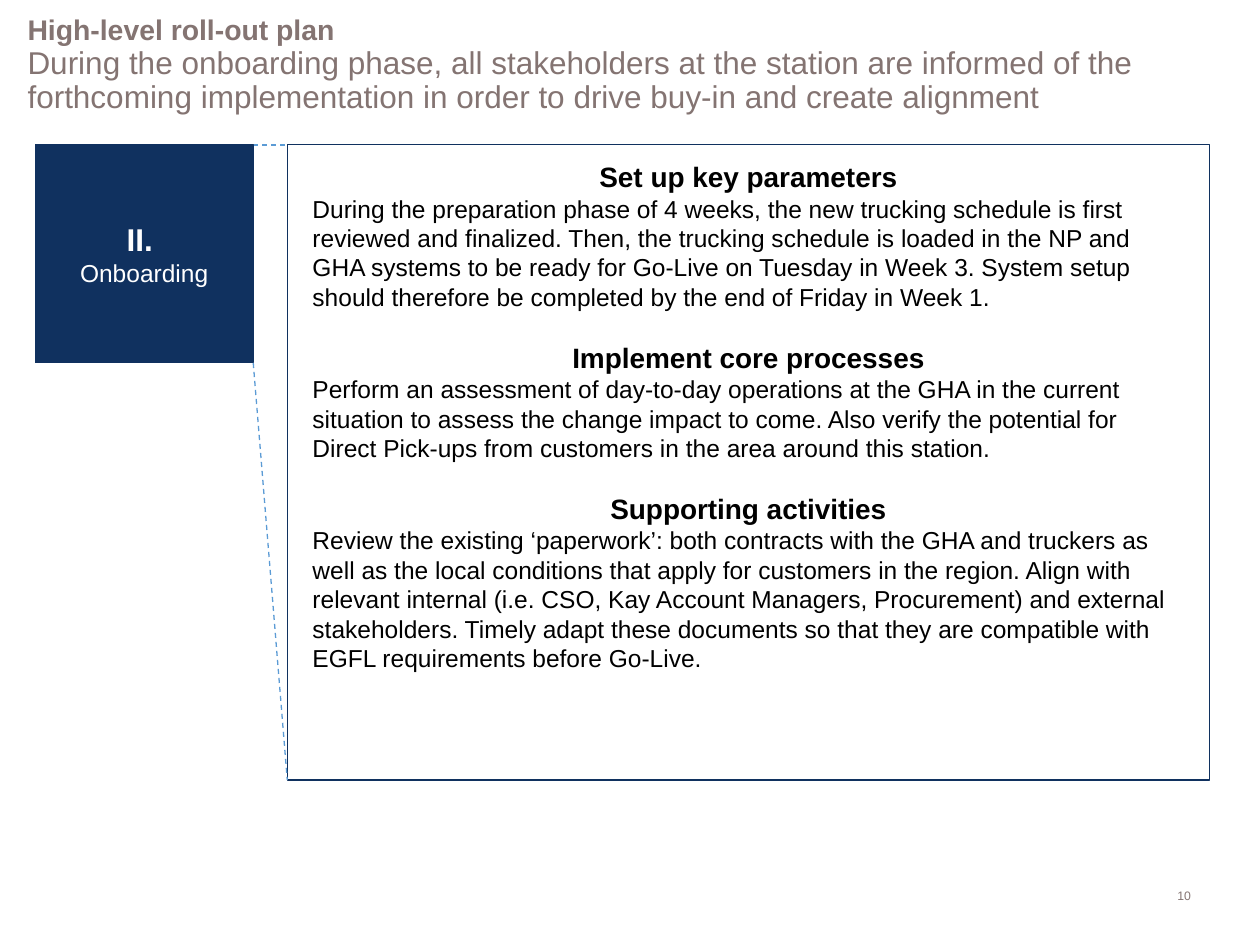
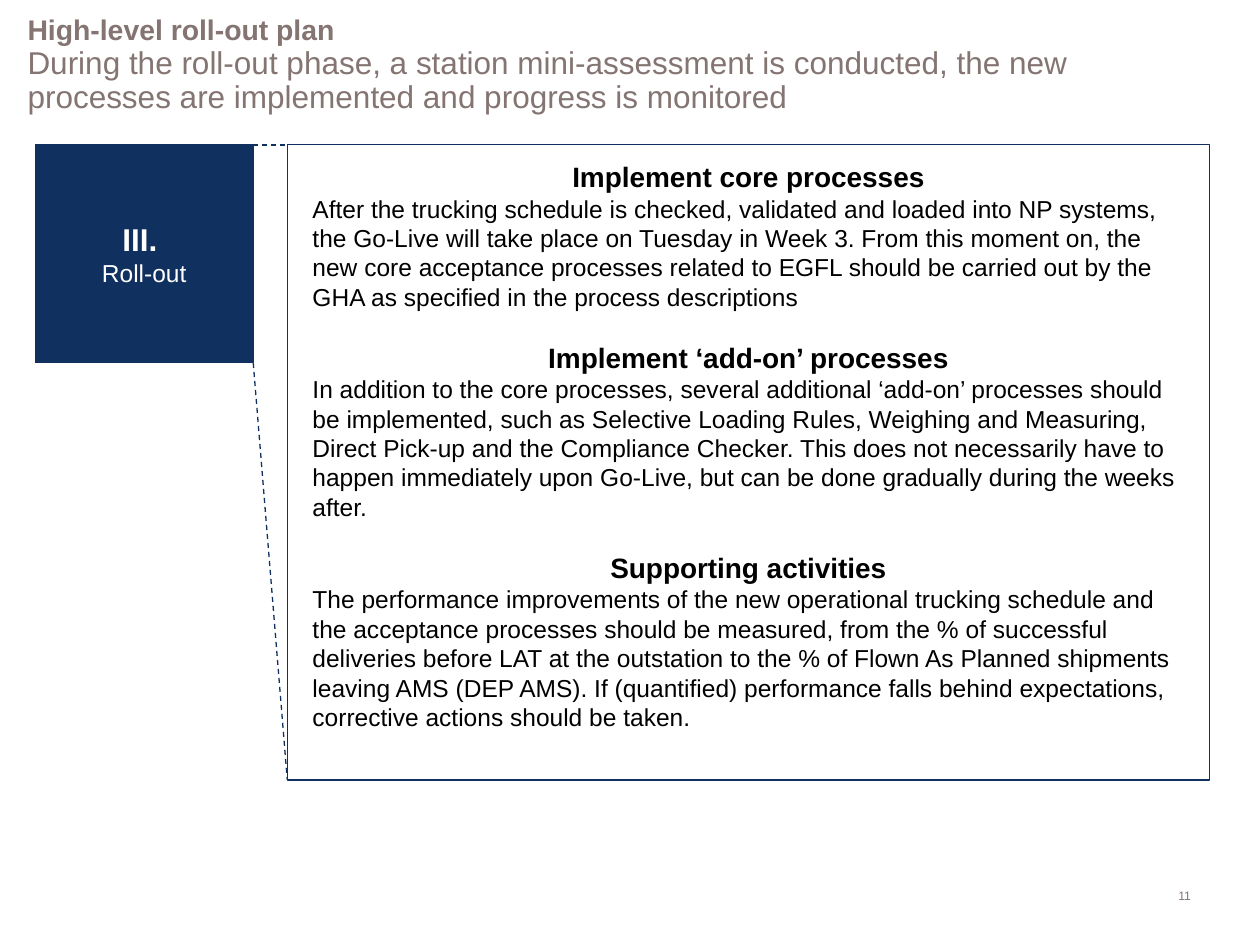
"""Build the two roll-out plan slides on onboarding and roll-out."""
from lxml.etree import SubElement
from pptx import Presentation
from pptx.dml.color import RGBColor
from pptx.enum.dml import MSO_LINE_DASH_STYLE as Dash
from pptx.enum.shapes import MSO_CONNECTOR as Connector, MSO_SHAPE as Shape
from pptx.enum.text import MSO_ANCHOR as Anchor, PP_ALIGN as Align
from pptx.oxml.ns import qn
from pptx.util import Inches, Pt

NAVY = RGBColor(0x10, 0x31, 0x5F)
SKY = RGBColor(0x5B, 0x9B, 0xD5)
TAUPE = RGBColor(0x84, 0x74, 0x72)
WHITE = RGBColor(0xFF, 0xFF, 0xFF)
BLACK = RGBColor(0, 0, 0)
FONT = "Arial"
HEADLINE = "High-level roll-out plan"

PHASES = [
    dict(
        page=10, numeral="II. ", name="Onboarding", guide=SKY, title_width=9.25,
        message="During the onboarding phase, all stakeholders at the station are informed "
                "of the forthcoming implementation in order to drive buy-in and create alignment",
        topics=[
            ("Set up key parameters",
             "During the preparation phase of 4 weeks, the new trucking schedule is first "
             "reviewed and finalized. Then, the trucking schedule is loaded in the NP and GHA "
             "systems to be ready for Go-Live on Tuesday in Week 3. System setup should "
             "therefore be completed by the end of Friday in Week 1."),
            ("Implement core processes",
             "Perform an assessment of day-to-day operations at the GHA in the current "
             "situation to assess the change impact to come. Also verify the potential for "
             "Direct Pick-ups from customers in the area around this station."),
            ("Supporting activities",
             "Review the existing ‘paperwork’: both contracts with the GHA and truckers as "
             "well as the local conditions that apply for customers in the region. Align with "
             "relevant internal (i.e. CSO, Kay Account Managers, Procurement) and external "
             "stakeholders. Timely adapt these documents so that they are compatible with "
             "EGFL requirements before Go-Live."),
        ],
    ),
    dict(
        page=11, numeral="III. ", name="Roll-out", guide=NAVY, title_width=8.62,
        message="During the roll-out phase, a station mini-assessment is conducted, the new "
                "processes are implemented and progress is monitored",
        topics=[
            ("Implement core processes",
             "After the trucking schedule is checked, validated and loaded into NP systems, "
             "the Go-Live will take place on Tuesday in Week 3. From this moment on, the new "
             "core acceptance processes related to EGFL should be carried out by the GHA as "
             "specified in the process descriptions"),
            ("Implement ‘add-on’ processes",
             "In addition to the core processes, several additional ‘add-on’ processes should "
             "be implemented, such as Selective Loading Rules, Weighing and Measuring, Direct "
             "Pick-up and the Compliance Checker. This does not necessarily have to happen "
             "immediately upon Go-Live, but can be done gradually during the weeks after."),
            ("Supporting activities",
             "The performance improvements of the new operational trucking schedule and the "
             "acceptance processes should be measured, from the % of successful deliveries "
             "before LAT at the outstation to the % of Flown As Planned shipments leaving AMS "
             "(DEP AMS). If (quantified) performance falls behind expectations, corrective "
             "actions should be taken."),
        ],
    ),
]

TOP = 1.15
TILE_LEFT, TILE_SIDE = 0.28, 1.73
PANEL_LEFT, PANEL_WIDTH, PANEL_HEIGHT = 2.28, 7.32, 5.04
TOPIC_GAP = 16.8


def write(box, lines, color, anchor=Anchor.TOP, inset=(0.1, 0.05), spacing=None):
    """Fill a box with (text, size, bold, alignment, space before) lines."""
    frame = box.text_frame
    frame.word_wrap = True
    frame.vertical_anchor = anchor
    frame.margin_left = frame.margin_right = Inches(inset[0])
    frame.margin_top = frame.margin_bottom = Inches(inset[1])
    for index, (text, size, bold, align, before) in enumerate(lines):
        para = frame.add_paragraph() if index else frame.paragraphs[0]
        para.text = text
        para.alignment = align
        para.space_before = Pt(before)
        para.line_spacing = spacing
        font = para.font
        font.name, font.size, font.bold = FONT, Pt(size), bold
        font.color.rgb = color


def add_text(slide, place, *args, **options):
    """Add a text box and fill it."""
    write(slide.shapes.add_textbox(*map(Inches, place)), *args, **options)


def add_rect(slide, place, fill, *args, **options):
    """Add a navy-edged rectangle and fill it with text."""
    rect = slide.shapes.add_shape(Shape.RECTANGLE, *map(Inches, place))
    rect.shadow.inherit = False
    rect.fill.solid()
    rect.fill.fore_color.rgb = fill
    rect.line.color.rgb = NAVY
    rect.line.width = Pt(0.75)
    write(rect, *args, **options)


def add_guide(slide, start_y, end_y, color):
    """Add a dashed line from the tile's right edge to the panel's left edge."""
    ends = TILE_LEFT + TILE_SIDE, start_y, PANEL_LEFT, end_y
    guide = slide.shapes.add_connector(Connector.STRAIGHT, *map(Inches, ends))
    guide.line.color.rgb = color
    guide.line.width = Pt(0.75)
    guide.line.dash_style = Dash.DASH
    SubElement(guide._element.spPr, qn("a:effectLst"))


def build_phase(slide, phase):
    """Lay out one phase of the plan."""
    add_text(slide, (8.74, 7, 0.81, 0.22),
             [(str(phase["page"]), 7, False, Align.RIGHT, 0)], TAUPE)
    add_text(slide, (0.12, 0.13, phase["title_width"], 0.78),
             [(HEADLINE, 16.2, True, Align.LEFT, 0),
              (phase["message"], 18, False, Align.LEFT, 0)],
             TAUPE, anchor=Anchor.MIDDLE, spacing=0.9)
    topic_lines = []
    for heading, body in phase["topics"]:
        gap = TOPIC_GAP if topic_lines else 0
        topic_lines += [(heading, 16, True, Align.CENTER, gap),
                        (body, 14, False, Align.LEFT, 0)]
    add_rect(slide, (PANEL_LEFT, TOP, PANEL_WIDTH, PANEL_HEIGHT), WHITE,
             topic_lines, BLACK, inset=(0.2, 0.12))
    add_guide(slide, TOP, TOP, phase["guide"])
    add_guide(slide, TOP + TILE_SIDE, TOP + PANEL_HEIGHT, phase["guide"])
    add_rect(slide, (TILE_LEFT, TOP, TILE_SIDE, TILE_SIDE), NAVY,
             [(phase["numeral"], 18, True, Align.CENTER, 0),
              (phase["name"], 14, False, Align.CENTER, 0)],
             WHITE, anchor=Anchor.MIDDLE)


def main():
    """Build and save the deck."""
    deck = Presentation()
    deck.slide_width, deck.slide_height = Inches(10), Inches(7.5)
    for phase in PHASES:
        build_phase(deck.slides.add_slide(deck.slide_layouts[6]), phase)
    deck.save("out.pptx")


if __name__ == "__main__":
    main()
